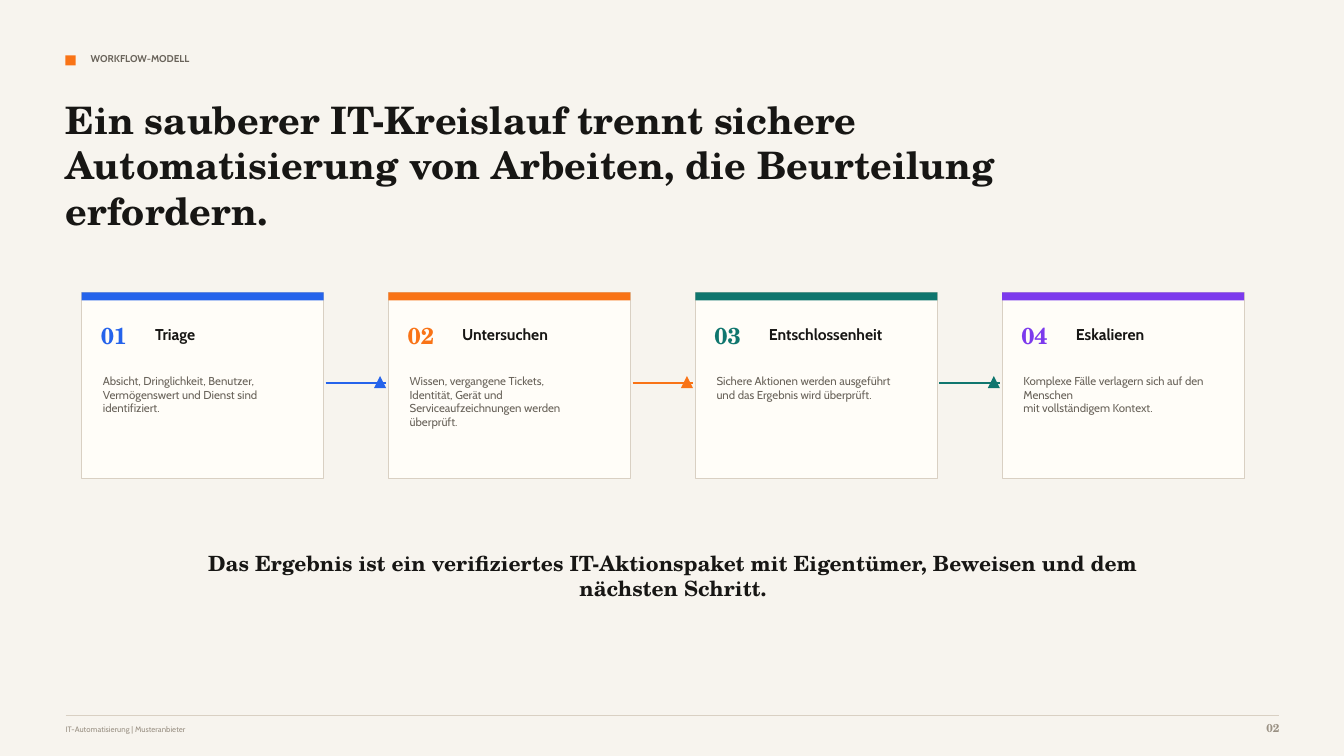
from dataclasses import dataclass

from pptx import Presentation
from pptx.dml.color import RGBColor
from pptx.enum.shapes import MSO_CONNECTOR, MSO_SHAPE
from pptx.enum.text import PP_ALIGN
from pptx.oxml.ns import qn
from pptx.shapes.autoshape import Shape
from pptx.slide import Slide
from pptx.util import Inches, Pt

CREAM = RGBColor(0xF7, 0xF4, 0xEE)
CARD_FILL = RGBColor(0xFF, 0xFD, 0xF8)
BORDER = RGBColor(0xD9, 0xD0, 0xC3)
INK = RGBColor(0x17, 0x16, 0x14)
MUTED = RGBColor(0x69, 0x63, 0x5A)
FOOTER_GRAY = RGBColor(0x9A, 0x91, 0x84)
BLUE = RGBColor(0x25, 0x63, 0xEB)
ORANGE = RGBColor(0xF9, 0x73, 0x16)
GREEN = RGBColor(0x0F, 0x76, 0x6E)
PURPLE = RGBColor(0x7C, 0x3A, 0xED)

SANS = "Cabin"
SERIF = "TeX Gyre Schola"

MARGIN = 0.65
CONTENT_WIDTH = 12.04
CARD_TOP, CARD_WIDTH, CARD_HEIGHT = 2.9, 2.4, 1.85
FIRST_CARD_LEFT, LAST_CARD_LEFT = 0.81, 9.94
ARROW_Y = 3.8
ARROW_LENGTH = 0.6
ARROWHEAD_SIZE = 0.12


@dataclass(frozen=True)
class Step:
    title: str
    description: str
    color: RGBColor


@dataclass(frozen=True)
class TextStyle:
    font: str
    size: float
    color: RGBColor
    bold: bool = False
    alignment: PP_ALIGN = PP_ALIGN.LEFT


STEPS = [
    Step("Triage",
         "Absicht, Dringlichkeit, Benutzer,\nVermögenswert und Dienst sind\nidentifiziert.",
         BLUE),
    Step("Untersuchen",
         "Wissen, vergangene Tickets,\nIdentität, Gerät und\nServiceaufzeichnungen werden überprüft.",
         ORANGE),
    Step("Entschlossenheit",
         "Sichere Aktionen werden ausgeführt\nund das Ergebnis wird überprüft.",
         GREEN),
    Step("Eskalieren",
         "Komplexe Fälle verlagern sich auf den Menschen\nmit vollständigem Kontext.",
         PURPLE),
]


def add_filled_shape(slide: Slide, kind: MSO_SHAPE, left: float, top: float,
                     width: float, height: float, color: RGBColor) -> Shape:
    shape = slide.shapes.add_shape(
        kind, Inches(left), Inches(top), Inches(width), Inches(height))
    shape.shadow.inherit = False
    shape.fill.solid()
    shape.fill.fore_color.rgb = color
    shape.line.fill.background()
    return shape


def add_text(slide: Slide, text: str, left: float, top: float,
             width: float, height: float, style: TextStyle) -> None:
    """Add a wrapped text box without insets, one paragraph per line of text."""
    box = slide.shapes.add_textbox(
        Inches(left), Inches(top), Inches(width), Inches(height))
    frame = box.text_frame
    frame.margin_left = frame.margin_right = 0
    frame.margin_top = frame.margin_bottom = 0
    frame.word_wrap = True
    frame.text = text
    for paragraph in frame.paragraphs:
        paragraph.alignment = style.alignment
        for run in paragraph.runs:
            run.font.name = style.font
            run.font.size = Pt(style.size)
            run.font.bold = style.bold
            run.font.color.rgb = style.color


def add_horizontal_line(slide: Slide, left: float, y: float, length: float,
                        color: RGBColor, weight: float) -> None:
    line = slide.shapes.add_connector(
        MSO_CONNECTOR.STRAIGHT,
        Inches(left), Inches(y), Inches(left + length), Inches(y))
    line.line.color.rgb = color
    line.line.width = Pt(weight)
    properties = line._element.spPr
    properties.append(properties.makeelement(qn("a:effectLst"), {}))


def add_card(slide: Slide, step: Step, number: int, left: float) -> None:
    card = add_filled_shape(slide, MSO_SHAPE.RECTANGLE, left, CARD_TOP,
                            CARD_WIDTH, CARD_HEIGHT, CARD_FILL)
    card.line.color.rgb = BORDER
    card.line.width = Pt(0.75)
    add_filled_shape(slide, MSO_SHAPE.RECTANGLE, left, CARD_TOP,
                     CARD_WIDTH, 0.08, step.color)
    add_text(slide, f"{number:02}", left + 0.19, 3.19, 0.46, 0.29,
             TextStyle(SERIF, 16.5, step.color, bold=True))
    add_text(slide, step.title, left + 0.73, 3.22, 1.33, 0.21,
             TextStyle(SANS, 11.2, INK, bold=True))
    add_text(slide, step.description, left + 0.21, 3.71, 1.92, 0.71,
             TextStyle(SANS, 8.2, MUTED))


def add_step_arrow(slide: Slide, left: float, color: RGBColor) -> None:
    """Add a bar with an upright triangle at its right end."""
    add_horizontal_line(slide, left, ARROW_Y, ARROW_LENGTH, color, 1.8)
    add_filled_shape(slide, MSO_SHAPE.ISOSCELES_TRIANGLE,
                     left + ARROW_LENGTH - ARROWHEAD_SIZE, 3.73,
                     ARROWHEAD_SIZE, ARROWHEAD_SIZE, color)


def add_header(slide: Slide) -> None:
    add_filled_shape(slide, MSO_SHAPE.RECTANGLE, MARGIN, 0.55, 0.1, 0.1, ORANGE)
    add_text(slide, "WORKFLOW-MODELL", 0.9, 0.52, 6.46, 0.19,
             TextStyle(SANS, 7.1, MUTED, bold=True))
    add_text(slide,
             "Ein sauberer IT-Kreislauf trennt sichere Automatisierung "
             "von Arbeiten, die Beurteilung erfordern.",
             MARGIN, 0.96, 9.38, 1.08, TextStyle(SERIF, 27, INK, bold=True))


def add_workflow(slide: Slide) -> None:
    pitch = (LAST_CARD_LEFT - FIRST_CARD_LEFT) / (len(STEPS) - 1)
    for index, step in enumerate(STEPS):
        left = FIRST_CARD_LEFT + index * pitch
        add_card(slide, step, index + 1, left)
        if index < len(STEPS) - 1:
            add_step_arrow(slide, left + CARD_WIDTH + 0.02, step.color)


def add_footer(slide: Slide) -> None:
    add_horizontal_line(slide, MARGIN, 7.1, CONTENT_WIDTH, BORDER, 0.75)
    add_text(slide, "IT-Automatisierung | Musteranbieter",
             MARGIN, 7.19, 7.92, 0.15, TextStyle(SANS, 5.6, FOOTER_GRAY))
    add_text(slide, "02", 12.19, 7.15, 0.5, 0.19,
             TextStyle(SERIF, 8.2, FOOTER_GRAY, bold=True, alignment=PP_ALIGN.RIGHT))


def main() -> None:
    presentation = Presentation()
    presentation.slide_width = Inches(13.33)
    presentation.slide_height = Inches(7.5)
    slide = presentation.slides.add_slide(presentation.slide_layouts[6])
    slide.background.fill.solid()
    slide.background.fill.fore_color.rgb = CREAM

    add_header(slide)
    add_workflow(slide)
    add_text(slide,
             "Das Ergebnis ist ein verifiziertes IT-Aktionspaket mit Eigentümer, "
             "Beweisen und dem nächsten Schritt.",
             1.83, 5.46, 9.69, 0.44,
             TextStyle(SERIF, 15, INK, bold=True, alignment=PP_ALIGN.CENTER))
    add_footer(slide)
    presentation.save("out.pptx")


if __name__ == "__main__":
    main()
